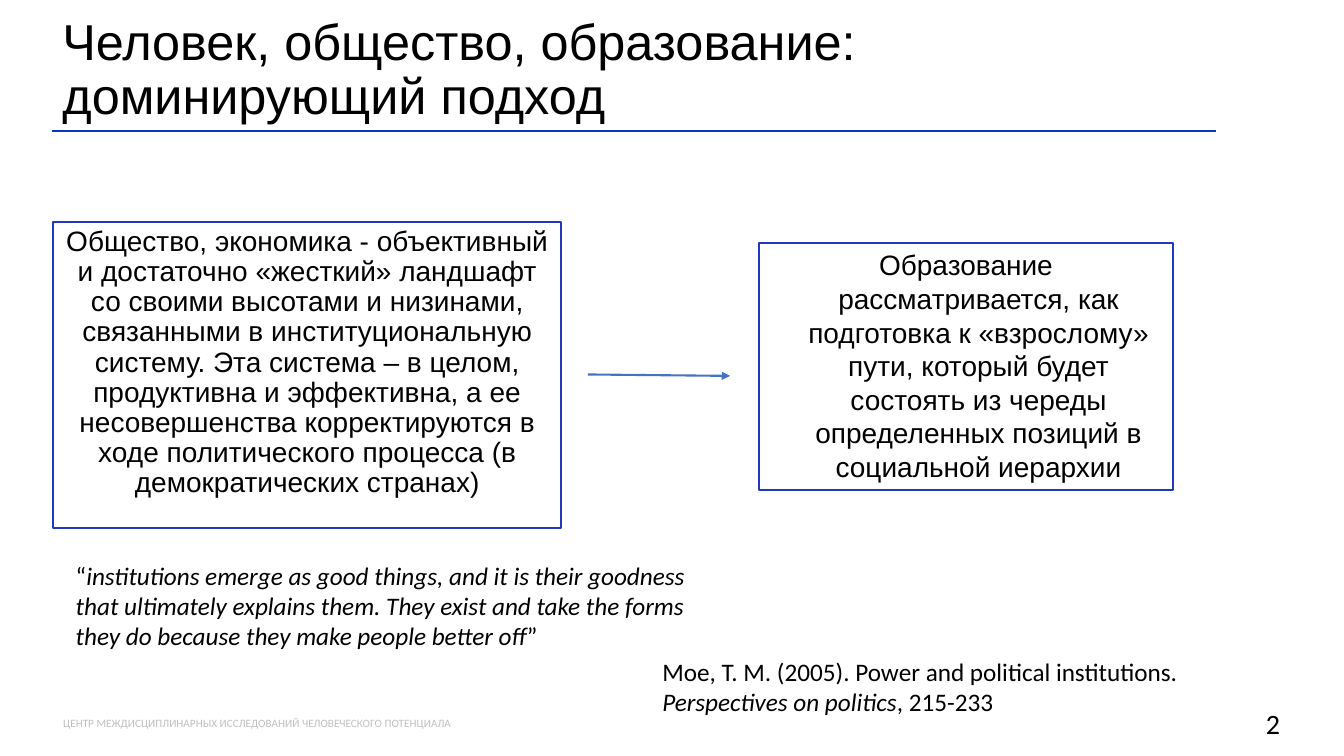
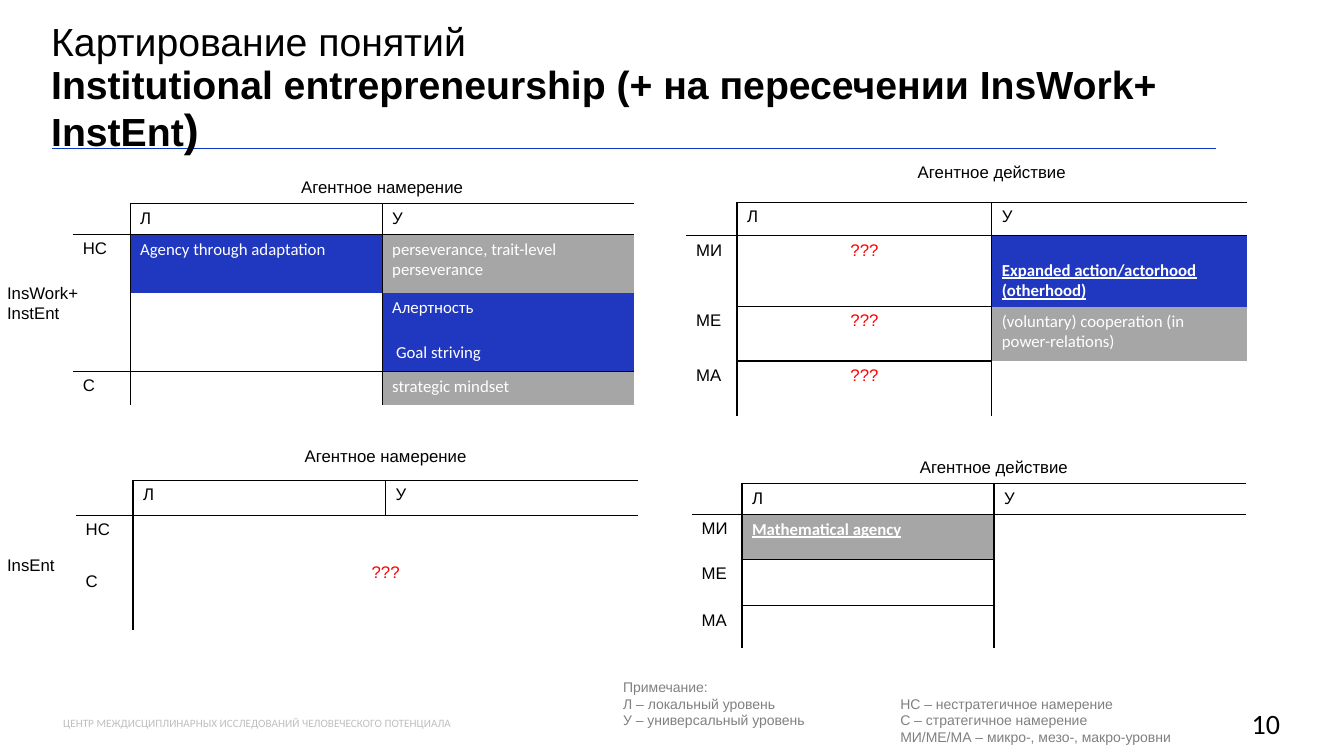
from dataclasses import dataclass, field

from lxml import etree
from pptx import Presentation
from pptx.dml.color import RGBColor
from pptx.enum.shapes import MSO_CONNECTOR, MSO_SHAPE
from pptx.enum.text import MSO_ANCHOR, PP_ALIGN
from pptx.oxml.ns import qn
from pptx.util import Pt

BLUE, RULE_BLUE, ARROW_BLUE = "2037BF", "0A37BF", "4472C4"
BLACK, WHITE, RED = "000000", "FFFFFF", "FF0000"
GREY, NOTE_GREY, FOOTER_GREY = "A6A6A6", "808080", "BFBFBF"
HEADING_FONT, BODY_FONT = "Arial", "Calibri"
FOOTER = "ЦЕНТР МЕЖДИСЦИПЛИНАРНЫХ ИССЛЕДОВАНИЙ ЧЕЛОВЕЧЕСКОГО ПОТЕНЦИАЛА"
LINE_BREAK = "\v"


@dataclass(frozen=True)
class Style:
    size: float
    font: str = HEADING_FONT
    color: str = BLACK
    bold: bool = False
    italic: bool = False
    underline: bool = False
    align: PP_ALIGN = PP_ALIGN.LEFT
    spacing: float = 1.0


@dataclass(frozen=True)
class Span:
    text: str
    style: Style


@dataclass(frozen=True)
class Area:
    left: float
    top: float
    width: float
    height: float


@dataclass(frozen=True)
class Entry:
    """Text and look of one table cell, with the rows and columns it covers."""
    lines: str
    style: Style
    fill: str = ""
    rows: int = 1
    columns: int = 1
    anchor: MSO_ANCHOR = MSO_ANCHOR.TOP


@dataclass(frozen=True)
class ConceptMap:
    left: float
    top: float
    widths: tuple[float, ...]
    heights: tuple[float, ...]
    heading: str
    levels: dict[int, str]
    entries: dict[tuple[int, int], Entry]
    underlined: set[tuple[int, int]] = field(default_factory=set)


TITLE = Style(36, spacing=0.9)
MAP_TITLE = Style(28, spacing=0.9)
MAP_TITLE_BOLD = Style(28, bold=True, spacing=0.9)
MAP_TITLE_END = Style(32, bold=True, spacing=0.9)
NUMBER = Style(20, BODY_FONT, align=PP_ALIGN.RIGHT)
FOOTER_STYLE = Style(8, BODY_FONT, FOOTER_GREY)
DENSE_BOX = Style(20, align=PP_ALIGN.CENTER, spacing=0.9)
BOX = Style(20, align=PP_ALIGN.CENTER)
QUOTE = Style(18, BODY_FONT)
QUOTE_ITALIC = Style(18, BODY_FONT, italic=True)
LABEL = Style(12)
LABEL_CENTERED = Style(12, align=PP_ALIGN.CENTER)
NOTE = Style(10, color=NOTE_GREY)
CONCEPT = Style(12, BODY_FONT, WHITE)
KEY_CONCEPT = Style(12, BODY_FONT, WHITE, bold=True, underline=True)
UNKNOWN = Style(12, color=RED, align=PP_ALIGN.CENTER)
QUESTION = Entry("???", UNKNOWN)

MAPS = (
    ConceptMap(
        52, 124, (41, 180, 180), (21, 21, 42, 32, 24, 24),
        "Агентное намерение", {2: "НС", 5: "С"},
        {
            (2, 1): Entry("Agency through adaptation", CONCEPT, BLUE),
            (2, 2): Entry("perseverance, trait-level perseverance", CONCEPT, GREY),
            (3, 2): Entry("Алертность", CONCEPT, BLUE),
            (4, 2): Entry(" Goal striving", CONCEPT, BLUE),
            (5, 2): Entry("strategic mindset", CONCEPT, GREY),
        },
        {(4, 0), (4, 1), (4, 2)},
    ),
    ConceptMap(
        490, 113, (36.5, 182, 182), (31.5, 24, 50.5, 39, 39),
        "Агентное действие", {2: "МИ", 3: "МЕ", 4: "МА"},
        {
            (2, 1): QUESTION,
            (3, 1): QUESTION,
            (4, 1): QUESTION,
            (2, 2): Entry("Expanded action/actorhood (otherhood)", KEY_CONCEPT, BLUE,
                          anchor=MSO_ANCHOR.BOTTOM),
            (3, 2): Entry("(voluntary) cooperation (in power-relations)", CONCEPT, GREY),
        },
        {(2, 1), (3, 1)},
    ),
    ConceptMap(
        54, 315.5, (41, 180.5, 180.5), (27.5, 25, 37.5, 44.5),
        "Агентное намерение", {2: "НС", 3: "С"},
        {(2, 1): Entry("???", UNKNOWN, rows=2, columns=2, anchor=MSO_ANCHOR.MIDDLE)},
    ),
    ConceptMap(
        494, 324, (36, 180, 180), (21, 21.5, 32.5, 33, 30),
        "Агентное действие", {2: "МИ", 3: "МЕ", 4: "МА"},
        {
            (2, 1): Entry("Mathematical agency", KEY_CONCEPT, GREY),
            (2, 2): Entry("", LABEL, rows=3),
        },
        {(2, 1), (3, 1)},
    ),
)


def rgb(color: str) -> RGBColor:
    return RGBColor.from_string(color)


def format_run(run, style: Style) -> None:
    font = run.font
    font.size, font.name = Pt(style.size), style.font
    font.bold, font.italic, font.underline = style.bold, style.italic, style.underline
    font.color.rgb = rgb(style.color)


def write(frame, paragraphs: list[list[Span]]) -> None:
    """Fill a text frame with paragraphs made of styled spans."""
    for index, spans in enumerate(paragraphs):
        para = frame.paragraphs[0] if index == 0 else frame.add_paragraph()
        para.alignment = spans[0].style.align
        para.line_spacing = spans[0].style.spacing
        for span in spans:
            if span.text == LINE_BREAK:
                para.add_line_break()
                continue
            run = para.add_run()
            run.text = span.text
            format_run(run, span.style)


def add_text(slide, area: Area, paragraphs: list[list[Span]],
             anchor: MSO_ANCHOR = MSO_ANCHOR.TOP) -> None:
    box = slide.shapes.add_textbox(
        Pt(area.left), Pt(area.top), Pt(area.width), Pt(area.height))
    box.text_frame.word_wrap = True
    box.text_frame.vertical_anchor = anchor
    write(box.text_frame, paragraphs)


def add_outlined_box(slide, area: Area, text: str, style: Style, hanging: float = 0) -> None:
    box = slide.shapes.add_shape(
        MSO_SHAPE.RECTANGLE, Pt(area.left), Pt(area.top), Pt(area.width), Pt(area.height))
    box.shadow.inherit = False
    box.fill.background()
    box.line.color.rgb = rgb(BLUE)
    box.line.width = Pt(1.5)
    box.text_frame.word_wrap = True
    box.text_frame.vertical_anchor = MSO_ANCHOR.TOP
    write(box.text_frame, [[Span(text, style)]])
    if hanging:
        properties = box.text_frame.paragraphs[0]._p.get_or_add_pPr()
        properties.set("marL", str(Pt(hanging)))
        properties.set("indent", str(-Pt(hanging)))


def add_line(slide, start: tuple[float, float], end: tuple[float, float],
             color: str, width: float, arrow: bool = False) -> None:
    line = slide.shapes.add_connector(
        MSO_CONNECTOR.STRAIGHT, Pt(start[0]), Pt(start[1]), Pt(end[0]), Pt(end[1]))
    line.line.color.rgb = rgb(color)
    line.line.width = Pt(width)
    if arrow:
        etree.SubElement(line.line._get_or_add_ln(), qn("a:tailEnd"), type="triangle")
    etree.SubElement(line._element.spPr, qn("a:effectLst"))


def set_borders(cell, sides: dict[str, bool]) -> None:
    """Draw the chosen sides in black and clear the others."""
    properties = cell._tc.get_or_add_tcPr()
    for side, visible in sides.items():
        line = etree.SubElement(properties, qn(f"a:ln{side}"), w=str(Pt(1)))
        if visible:
            paint = etree.SubElement(line, qn("a:solidFill"))
            etree.SubElement(paint, qn("a:srgbClr"), val=BLACK)
        else:
            etree.SubElement(line, qn("a:noFill"))


def fill_cell(cell, entry: Entry) -> None:
    cell.vertical_anchor = entry.anchor
    if entry.fill:
        cell.fill.solid()
        cell.fill.fore_color.rgb = rgb(entry.fill)
    else:
        cell.fill.background()
    para = cell.text_frame.paragraphs[0]
    if entry.lines:
        write(cell.text_frame, [[Span(entry.lines, entry.style)]])
    else:
        etree.SubElement(para._p, qn("a:endParaRPr"), sz=str(int(entry.style.size * 100)))


def add_concept_map(slide, concept_map: ConceptMap) -> None:
    widths, heights = concept_map.widths, concept_map.heights
    table = slide.shapes.add_table(
        len(heights), len(widths), Pt(concept_map.left), Pt(concept_map.top),
        Pt(sum(widths)), Pt(sum(heights))).table
    table.first_row = table.horz_banding = False
    for column, width in zip(table.columns, widths):
        column.width = Pt(width)
    for row, height in zip(table.rows, heights):
        row.height = Pt(height)

    entries = {
        (0, 1): Entry(concept_map.heading, LABEL_CENTERED, columns=2),
        (1, 1): Entry("Л", LABEL),
        (1, 2): Entry("У", LABEL),
        **{(row, 0): Entry(level, LABEL) for row, level in concept_map.levels.items()},
        **concept_map.entries,
    }
    for (row, column), entry in entries.items():
        if entry.rows * entry.columns > 1:
            last = table.cell(row + entry.rows - 1, column + entry.columns - 1)
            table.cell(row, column).merge(last)

    underlined = {(0, 1), (0, 2), (1, 0), (1, 1), (1, 2)} | concept_map.underlined
    for row in range(len(heights)):
        for column in range(len(widths)):
            cell = table.cell(row, column)
            entry = entries.get((row, column), Entry("", LABEL))
            shown = not cell.is_spanned
            set_borders(cell, {
                "L": shown and row > 0 and column > 0,
                "R": shown and row > 0 and column + entry.columns < len(widths),
                "T": shown and (row - 1, column) in underlined,
                "B": shown and (row, column) in underlined,
            })
            fill_cell(cell, entry)


def add_frame(deck, number: int, rule_top: float, title_area: Area,
              title: list[list[Span]]):
    """Start a slide with its title, rule, footer and number."""
    slide = deck.slides.add_slide(deck.slide_layouts[6])
    add_line(slide, (37.5, rule_top), (868.5, rule_top), RULE_BLUE, 1)
    middle = MSO_ANCHOR.MIDDLE
    add_text(slide, Area(705.5, 502, 216, 29), [[Span(str(number), NUMBER)]], middle)
    add_text(slide, Area(38, 502, 760, 29), [[Span(FOOTER, FOOTER_STYLE)]], middle)
    add_text(slide, title_area, title, middle)
    return slide


def add_approach_slide(deck) -> None:
    slide = add_frame(
        deck, 2, 93.5, Area(37.5, 16.5, 831, 69),
        [[Span("Человек, общество, образование: доминирующий подход", TITLE)]])
    add_outlined_box(
        slide, Area(38, 158.5, 363, 219),
        "Общество, экономика - объективный и достаточно «жесткий» ландшафт со своими "
        "высотами и низинами, связанными в институциональную систему. Эта система – в "
        "целом, продуктивна и эффективна, а ее несовершенства корректируются в ходе "
        "политического процесса (в демократических странах)", DENSE_BOX)
    add_outlined_box(
        slide, Area(542, 173.5, 296, 176.5),
        "Образование рассматривается, как подготовка к «взрослому» пути, который будет "
        "состоять из череды определенных позиций в социальной иерархии", BOX, hanging=18)
    add_text(slide, Area(47, 396.5, 480, 73), [[
        Span("“", QUOTE),
        Span("institutions emerge as good things, and it is their goodness that ultimately "
             "explains them. They exist and take the forms they do because they make "
             "people better off", QUOTE_ITALIC),
        Span("”", QUOTE)]])
    add_text(slide, Area(466, 465, 480, 51), [[
        Span("Moe, T. M. (2005). Power and political institutions. ", QUOTE),
        Span(LINE_BREAK, QUOTE),
        Span("Perspectives on politics", QUOTE_ITALIC),
        Span(", 215-233", QUOTE)]])
    add_line(slide, (420, 267.5), (521.5, 268.5), ARROW_BLUE, 1.5, arrow=True)


def add_mapping_slide(deck) -> None:
    slide = add_frame(
        deck, 10, 106, Area(29.5, 29.5, 839, 69),
        [[Span("Картирование понятий", MAP_TITLE)],
         [Span("Institutional entrepreneurship (+ на пересечении InsWork+ InstEnt",
               MAP_TITLE_BOLD), Span(")", MAP_TITLE_END)]])
    for concept_map in MAPS:
        add_concept_map(slide, concept_map)
    add_text(slide, Area(-2, 198.5, 68.5, 36), [[Span("InsWork+ InstEnt", LABEL)]])
    add_text(slide, Area(-2, 393, 54, 22), [[Span("InsEnt", LABEL)]])
    notes = (
        (Area(438, 481, 190, 44),
         ("Примечание:", "Л – локальный уровень", "У – универсальный уровень")),
        (Area(636, 493, 212, 44),
         ("НС – нестратегичное намерение", "С – стратегичное намерение",
          "МИ/МЕ/МА – микро-, мезо-, макро-уровни")),
    )
    for area, lines in notes:
        add_text(slide, area, [[Span(line, NOTE)] for line in lines])


def main() -> None:
    deck = Presentation()
    deck.slide_width, deck.slide_height = Pt(960), Pt(540)
    add_approach_slide(deck)
    add_mapping_slide(deck)
    deck.save("out.pptx")


if __name__ == "__main__":
    main()
